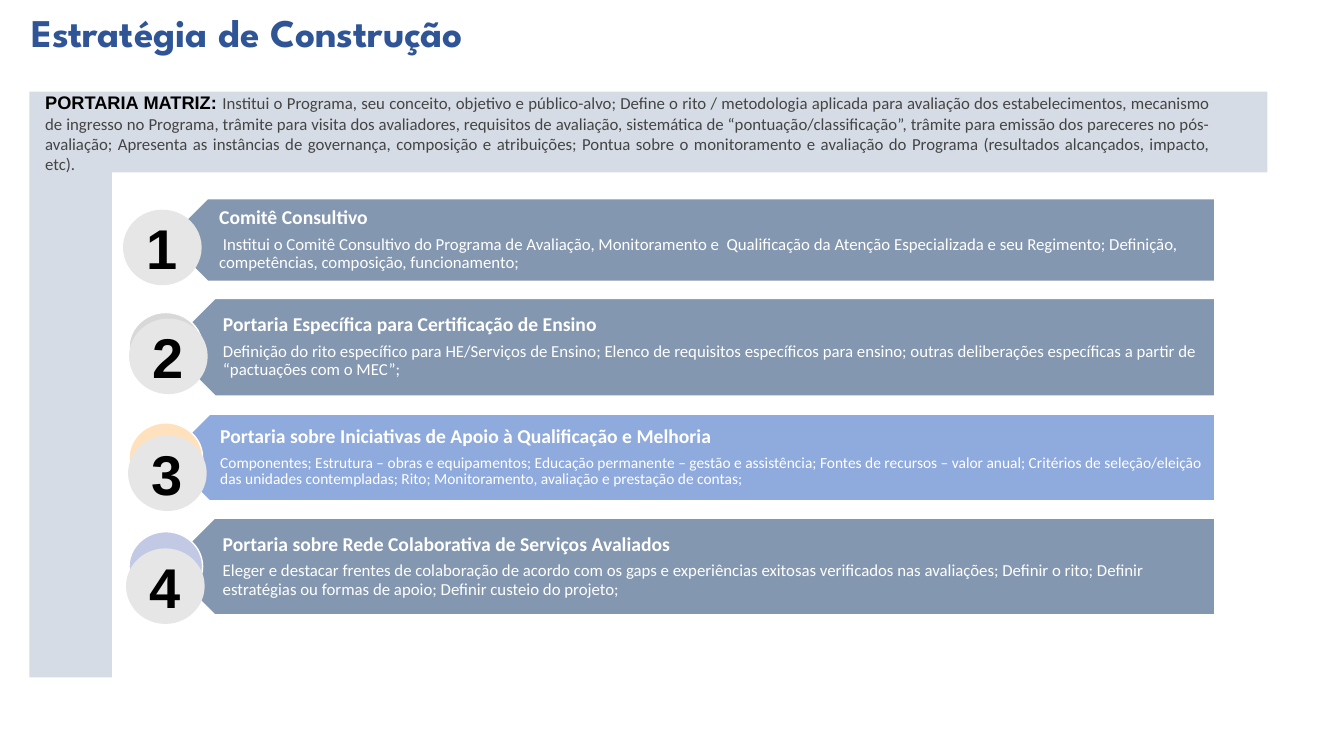
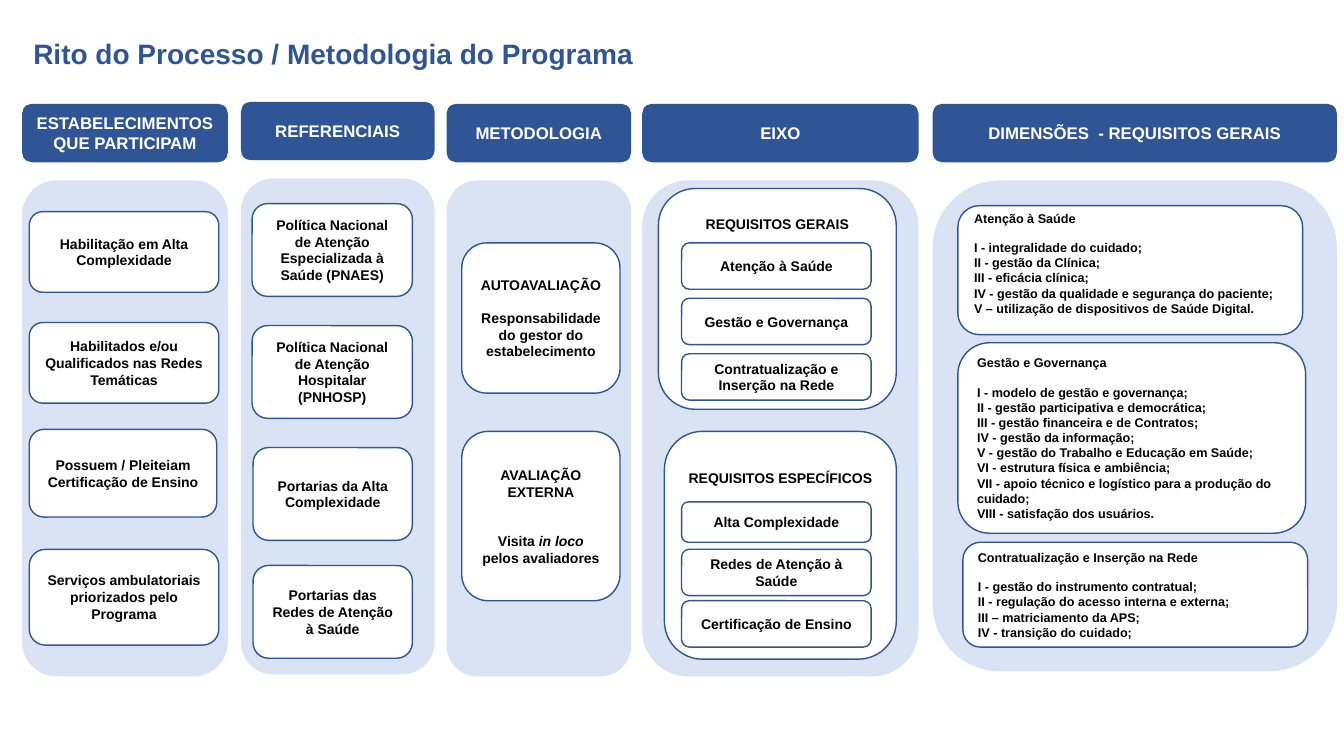
"""Builds two slides on the evaluation programme: its ordinances and its process."""
from dataclasses import dataclass

from pptx import Presentation
from pptx import util as u
from pptx.dml.color import RGBColor
from pptx.enum import shapes, text

SHAPE = shapes.MSO_SHAPE
ALIGN = text.PP_ALIGN
ANCHOR = text.MSO_ANCHOR


@dataclass(frozen=True)
class Theme:
    """Colours, fonts and type sizes shared by the slides."""
    navy: str = "2F5597"
    panel: str = "DAE3F3"
    frame: str = "D6DCE5"
    slate: str = "8497B0"
    sky: str = "8FAADC"
    badge: str = "E7E6E6"
    white: str = "FFFFFF"
    black: str = "000000"
    grey: str = "444444"
    display: str = "League Spartan"
    sans: str = "Arial"
    body: str = "Calibri"
    title: int = 28
    subtitle: int = 20
    number: int = 40
    heading: int = 14
    lead: int = 13
    normal: int = 12
    small: int = 11
    card: int = 10
    detail: int = 9


T = Theme()
LINE = 1.15

ORDINANCES = [
    (1.97, 0.82, T.slate, T.normal, None, (-0.43, 0.11), "Comitê Consultivo",
     " Institui o Comitê Consultivo do Programa de Avaliação, Monitoramento e  Qualificação da "
     "Atenção Especializada e seu Regimento; Definição, competências, composição, funcionamento;"),
    (2.96, 0.97, T.slate, T.normal, "D8D8D8", (-0.37, 0.2),
     "Portaria Específica para Certificação de Ensino",
     "Definição do rito específico para HE/Serviços de Ensino; Elenco de requisitos específicos "
     "para ensino; outras deliberações específicas a partir de “pactuações com o MEC”;"),
    (4.11, 0.86, T.sky, T.small, "FFE2BD", (-0.38, 0.21),
     "Portaria sobre Iniciativas de Apoio à Qualificação e Melhoria",
     "Componentes; Estrutura – obras e equipamentos; Educação permanente – gestão e assistência; "
     "Fontes de recursos – valor anual; Critérios de seleção/eleição das unidades contempladas; "
     "Rito; Monitoramento, avaliação e prestação de contas;"),
    (5.14, 0.96, T.slate, T.normal, "C1C9E4", (-0.4, 0.3),
     "Portaria sobre Rede Colaborativa de Serviços Avaliados",
     "Eleger e destacar frentes de colaboração de acordo com os gaps e experiências exitosas "
     "verificados nas avaliações; Definir o rito; Definir estratégias ou formas de apoio; "
     "Definir custeio do projeto;"),
]

MATRIX = (
    "Institui o Programa, seu conceito, objetivo e público-alvo; Define o rito / metodologia "
    "aplicada para avaliação dos estabelecimentos, mecanismo de ingresso no Programa, trâmite "
    "para visita dos avaliadores, requisitos de avaliação, sistemática de "
    "“pontuação/classificação”, trâmite para emissão dos pareceres no pós-avaliação; Apresenta "
    "as instâncias de governança, composição e atribuições; Pontua sobre o monitoramento e "
    "avaliação do Programa (resultados alcançados, impacto, etc).")

PARTICIPANTS = [
    ((0.07, 1.07, 1.88, 0.8), "Habilitação em Alta Complexidade"),
    ((0.07, 2.17, 1.88, 0.8), "Habilitados e/ou Qualificados nas Redes Temáticas"),
    ((0.07, 3.23, 1.86, 0.87), "Possuem / Pleiteiam Certificação de Ensino"),
    ((0.07, 4.42, 1.88, 0.95), "Serviços ambulatoriais priorizados pelo Programa"),
]
REFERENCES = [
    ((0.11, 1.01, 1.59, 0.92), "Política Nacional de Atenção Especializada à Saúde (PNAES)"),
    ((0.11, 2.22, 1.59, 0.92), "Política Nacional de Atenção Hospitalar (PNHOSP)"),
    ((0.12, 3.43, 1.58, 0.92), "Portarias da Alta Complexidade"),
    ((0.12, 4.6, 1.58, 0.92), "Portarias das Redes de Atenção à Saúde"),
]
METHODS = [
    ((0.15, 1.38, 1.57, 1.49), 1,
     ["AUTOAVALIAÇÃO", "Responsabilidade do gestor do estabelecimento"]),
    ((0.15, 3.25, 1.57, 1.68), 2,
     ["AVALIAÇÃO EXTERNA", ["Visita ", "in loco", " pelos avaliadores"]]),
]
AXES = [
    ((0.16, 0.84, 2.36, 2.19), 0.16, "REQUISITOS GERAIS",
     [(1.38, 0.46, "Atenção à Saúde"), (1.93, 0.46, "Gestão e Governança"),
      (2.48, 0.46, "Contratualização e Inserção na Rede")]),
    ((0.22, 3.25, 2.3, 2.26), 0.27, "REQUISITOS ESPECÍFICOS",
     [(3.95, 0.4, "Alta Complexidade"), (4.42, 0.46, "Redes de Atenção à Saúde"),
      (4.93, 0.46, "Certificação de Ensino")]),
]
DIMENSIONS = [
    ((0.25, 1.01, 3.42, 1.28), (0, 0.14),
     ["Atenção à Saúde", "I - integralidade do cuidado;", "II - gestão da Clínica;",
      "III - eficácia clínica;", "IV - gestão da qualidade e segurança do paciente;",
      "V – utilização de dispositivos de Saúde Digital."]),
    ((0.25, 2.37, 3.45, 1.89), (0.05, 0.05),
     ["Gestão e Governança", "I - modelo de gestão e governança;",
      "II - gestão participativa e democrática;", "III - gestão financeira e de Contratos;",
      "IV - gestão da informação;", "V - gestão do Trabalho e Educação em Saúde;",
      "VI - estrutura física e ambiência;",
      "VII - apoio técnico e logístico para a produção do cuidado;",
      "VIII - satisfação dos usuários."]),
    ((0.3, 4.35, 3.42, 1.04), (0.05, 0.05),
     ["Contratualização e Inserção na Rede", "I - gestão do instrumento contratual;",
      "II - regulação do acesso interna e externa;", "III – matriciamento da APS;",
      "IV - transição do cuidado;"]),
]


def rgb(value):
    """Return a colour object for a hex value."""
    return RGBColor.from_string(value)


def style(r, size, color, font=T.sans, bold=True):
    """Format one run."""
    r.font.size, r.font.name, r.font.bold = u.Pt(size), font, bold
    r.font.color.rgb = rgb(color)


def write(tf, paragraphs, size, color, align=ALIGN.CENTER, font=T.sans):
    """Fill a text frame with bold paragraphs; a list gives the runs of one paragraph."""
    tf.word_wrap = True
    for i, content in enumerate(paragraphs):
        p = tf.paragraphs[0] if i == 0 else tf.add_paragraph()
        p.alignment = align
        for part in [content] if isinstance(content, str) else content:
            r = p.add_run()
            r.text = part
            style(r, size, color, font)
    return tf.paragraphs


def place(sp, box):
    """Move a shape to a box given in inches."""
    sp.left, sp.top, sp.width, sp.height = map(u.Inches, box)


def inside(box, offset):
    """Turn an offset box into slide coordinates."""
    return (box[0] + offset[0], box[1] + offset[1], *offset[2:])


def paint(sp, fill, line=None):
    """Give a shape a flat fill and an optional outline."""
    sp.shadow.inherit = False
    sp.fill.solid()
    sp.fill.fore_color.rgb = rgb(fill)
    if line:
        sp.line.color.rgb, sp.line.width = rgb(line), u.Pt(1)
    else:
        sp.line.fill.background()


def add_block(s, kind, box, fill, line=None):
    """Add a flat preset shape."""
    sp = s.shapes.add_shape(kind, *map(u.Inches, box))
    paint(sp, fill, line)
    sp.text_frame.vertical_anchor = ANCHOR.MIDDLE
    return sp


def add_title(s, box, label, size, font):
    """Place and format the slide title."""
    sp = s.shapes.title
    place(sp, box)
    tf = sp.text_frame
    tf.text = label
    tf.word_wrap, tf.auto_size = True, text.MSO_AUTO_SIZE.NONE
    tf.vertical_anchor = ANCHOR.TOP
    tf.paragraphs[0].alignment = ALIGN.LEFT
    style(tf.paragraphs[0].runs[0], size, T.navy, font)


def add_matrix(s, box):
    """Draw the corner frame and the main ordinance on its top band."""
    x, y, w, h = box
    band, arm = 0.8, 0.82
    corners = [(0, 0), (w, 0), (w, band), (arm, band), (arm, h), (0, h)]
    points = [(u.Inches(x + dx), u.Inches(y + dy)) for dx, dy in corners]
    outline = s.shapes.build_freeform(*points[0])
    outline.add_line_segments(points[1:], close=True)
    paint(outline.convert_to_shape(), T.frame)
    sp = s.shapes.add_textbox(*map(u.Inches, inside(box, (0.06, -0.05, 11.76, 0.93))))
    p = write(sp.text_frame, [["PORTARIA MATRIZ: ", MATRIX]], T.lead, T.black, ALIGN.JUSTIFY)[0]
    style(p.runs[1], T.normal, T.grey, T.body, False)


def add_ordinance(s, box, number, fill, size, halo, badge, heading, detail):
    """Draw one numbered arrow band."""
    band = add_block(s, SHAPE.PENTAGON, box, fill, T.white)
    band._element.spPr.xfrm.set("flipH", "1")
    tf = band.text_frame
    tf.margin_left, tf.margin_right = u.Inches(0.32), u.Inches(0.11)
    tf.margin_top = tf.margin_bottom = u.Inches(0.06)
    head, body = write(tf, [heading, detail], T.heading, T.white, ALIGN.LEFT, T.body)
    head.line_spacing = body.line_spacing = 0.9
    head.space_after = u.Pt(5)
    style(body.runs[0], size, T.white, T.body, False)
    if halo:
        add_block(s, SHAPE.OVAL, inside(box, (-0.37, box[3] / 2 - 0.345, 0.73, 0.69)),
                  halo, T.white)
    disc = add_block(s, SHAPE.OVAL, inside(box, (*badge, 0.78, 0.75)), T.badge)
    write(disc.text_frame, [str(number)], T.number, T.black)


def add_column(s, box, label):
    """Draw a column header and the panel below it."""
    x, y, w, h = box
    header = add_block(s, SHAPE.ROUNDED_RECTANGLE, (x, y, w, 0.58), T.navy)
    write(header.text_frame, [label], T.normal, T.white)
    add_block(s, SHAPE.ROUNDED_RECTANGLE, (x, y + 0.76, w, h - 0.76), T.panel)


def add_card(s, box, paragraphs, size=T.card, align=ALIGN.CENTER, gap=0):
    """Draw an outlined card, with a gap of some lines after its heading."""
    sp = add_block(s, SHAPE.ROUNDED_RECTANGLE, box, T.white, T.navy)
    ps = write(sp.text_frame, paragraphs, size, T.black, align)
    if gap:
        ps[1].space_before = u.Pt(round(gap * size * LINE, 1))
    return sp


def add_card_column(s, box, label, cards):
    """Draw a column of plain cards."""
    add_column(s, box, label)
    for offset, content in cards:
        add_card(s, inside(box, offset), [content])


def add_methods(s, box):
    """Draw the column of evaluation methods."""
    add_column(s, box, "METODOLOGIA")
    for offset, gap, content in METHODS:
        sp = add_card(s, inside(box, offset), content, gap=gap)
        for r in sp.text_frame.paragraphs[1].runs:
            r.font.italic = r.text == "in loco"


def add_axes(s, box):
    """Draw the column of requirement groups."""
    add_column(s, box, "EIXO")
    for offset, inset, heading, items in AXES:
        tf = add_card(s, inside(box, offset), [heading]).text_frame
        tf.vertical_anchor, tf.margin_top = ANCHOR.TOP, u.Inches(inset)
        for top, height, label in items:
            add_card(s, inside(box, (0.39, top, 1.88, height)), [label])


def add_dimensions(s, box):
    """Draw the column of general requirements."""
    add_column(s, box, "DIMENSÕES  - REQUISITOS GERAIS")
    for offset, margins, lines in DIMENSIONS:
        tf = add_card(s, inside(box, offset), lines, T.detail, ALIGN.LEFT, 1).text_frame
        tf.margin_top, tf.margin_bottom = map(u.Inches, margins)


def build_strategy(s):
    """Build the slide of ordinances."""
    add_title(s, (0.21, 0.03, 8.78, 0.57), "Estratégia de Construção", T.title, T.display)
    add_matrix(s, (0.29, 0.91, 12.28, 5.81))
    for number, (top, height, *rest) in enumerate(ORDINANCES, 1):
        add_ordinance(s, (1.65, top, 10.4, height), number, *rest)


def build_process(s):
    """Build the slide of process columns."""
    add_title(s, (0.23, 0.31, 10.26, 0.44), "Rito do Processo / Metodologia do Programa",
              T.subtitle, T.sans)
    add_card_column(s, (0.22, 1.03, 2.04, 5.68), "ESTABELECIMENTOS QUE PARTICIPAM", PARTICIPANTS)
    add_card_column(s, (2.39, 1.01, 1.92, 5.68), "REFERENCIAIS", REFERENCES)
    add_methods(s, (4.43, 1.03, 1.83, 5.68))
    add_axes(s, (6.37, 1.03, 2.74, 5.68))
    add_dimensions(s, (9.25, 1.03, 4.01, 5.63))


def main():
    """Build and save the presentation."""
    prs = Presentation()
    prs.slide_width, prs.slide_height = u.Inches(13.33), u.Inches(7.5)
    for build in (build_strategy, build_process):
        build(prs.slides.add_slide(prs.slide_layouts[5]))
    prs.save("out.pptx")


if __name__ == "__main__":
    main()
